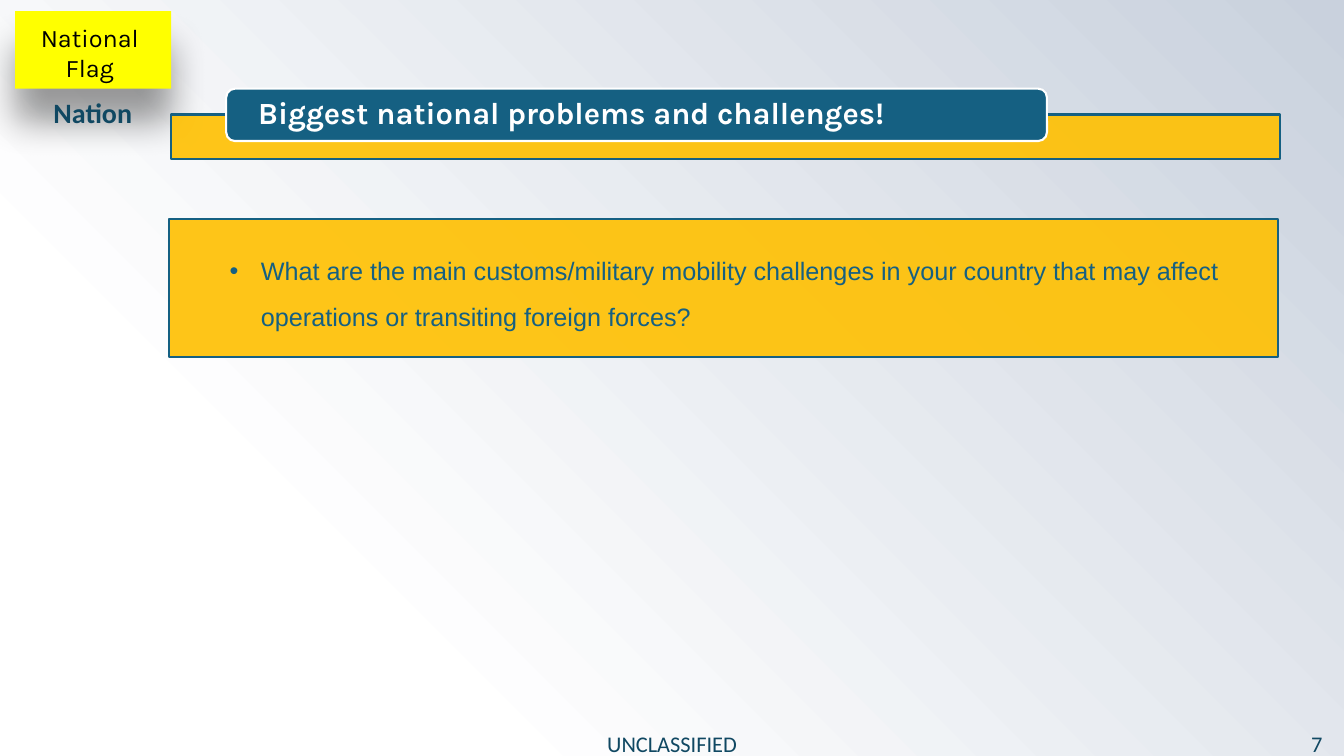
import pptx
import pptx.util
import pptx.dml.color
import pptx.enum.shapes
import pptx.enum.text
import pptx.oxml
import pptx.oxml.ns

COLORS = {"sky": "C9D1DD", "white": "FFFFFF", "navy": "104862", "blue": "156082",
          "amber": "FFC000", "yellow": "FFFF00", "black": "000000"}
NAMESPACE = pptx.oxml.ns.nsdecls("a")
SHAPES = pptx.enum.shapes.MSO_SHAPE
ALIGN = pptx.enum.text.PP_ALIGN
ANCHOR = pptx.enum.text.MSO_ANCHOR

presentation = pptx.Presentation()
presentation.slide_width = pptx.util.Inches(13.33)
presentation.slide_height = pptx.util.Inches(7.5)
slide = presentation.slides.add_slide(presentation.slide_layouts[6])


def place(left, top, width, height):
    across, down = presentation.slide_width / 100, presentation.slide_height / 100
    return [int(length) for length in (left * across, top * down, width * across, height * down)]


def add_text(area, text, font, size, color, bold=False, align=ALIGN.CENTER, anchor=ANCHOR.MIDDLE):
    shape = slide.shapes.add_textbox(*place(*area))
    shape.text_frame.word_wrap = True
    shape.text_frame.vertical_anchor = anchor
    paragraph = shape.text_frame.paragraphs[0]
    paragraph.text = text
    paragraph.alignment = align
    paragraph.font.name = font
    paragraph.font.size = pptx.util.Pt(size)
    paragraph.font.bold = bold
    paragraph.font.color.rgb = pptx.dml.color.RGBColor.from_string(COLORS[color])
    return shape


background = slide.background.fill
background.gradient()
for stop, color, position in zip(background.gradient_stops, ("sky", "white"), (0, 0.76)):
    stop.color.rgb = pptx.dml.color.RGBColor.from_string(COLORS[color])
    stop.position = position
linear = slide.background.element.find(".//" + pptx.oxml.ns.qn("a:lin"))
linear.getparent().replace(linear, pptx.oxml.parse_xml(
    f'<a:path {NAMESPACE} path="circle"><a:fillToRect l="100000" b="100000"/></a:path>'))

panels = {}
for name, kind, area, fill, line, alpha in (
    ("flag", SHAPES.RECTANGLE, (1.13, 1.47, 11.6, 10.27), "yellow", None, 100),
    ("strip", SHAPES.RECTANGLE, (12.71, 15.15, 82.52, 5.87), "amber", "blue", 90),
    ("title", SHAPES.ROUNDED_RECTANGLE, (16.83, 11.73, 61.07, 6.93), "blue", "white", 100),
    ("question", SHAPES.RECTANGLE, (12.6, 28.93, 82.52, 18.27), "amber", "blue", 90),
):
    shape = slide.shapes.add_shape(kind, *place(*area))
    shape.shadow.inherit = False
    shape.fill.solid()
    shape.fill.fore_color.rgb = pptx.dml.color.RGBColor.from_string(COLORS[fill])
    if alpha < 100:
        color_element = shape.element.spPr.find(".//" + pptx.oxml.ns.qn("a:srgbClr"))
        color_element.append(pptx.oxml.parse_xml(f'<a:alpha {NAMESPACE} val="{alpha * 1000}"/>'))
    if line:
        shape.line.color.rgb = pptx.dml.color.RGBColor.from_string(COLORS[line])
        shape.line.width = pptx.util.Pt(1.5)
    else:
        shape.line.fill.background()
    panels[name] = shape

effects = panels["flag"].element.spPr.find(pptx.oxml.ns.qn("a:effectLst"))
effects.append(pptx.oxml.parse_xml(
    f'<a:outerShdw {NAMESPACE} blurRad="{pptx.util.Pt(26)}" dist="{pptx.util.Pt(24)}" '
    f'dir="5400000" algn="ctr" rotWithShape="0"><a:srgbClr val="{COLORS["black"]}">'
    '<a:alpha val="39000"/></a:srgbClr></a:outerShdw>'))

for left, width, text in ((43.59, 12.83, "UNCLASSIFIED"), (95.95, 4.04, "7")):
    footer = add_text((left, 96.67, width, 3.32), text, "Calibri", 16, "navy")
    footer.text_frame.margin_top = footer.text_frame.margin_bottom = 0

add_text((1.58, 2.27, 10.2, 9.47), "National Flag", "Karla", 18, "black", anchor=ANCHOR.TOP)
nation = add_text((0.68, 10.8, 12.45, 8.8), "Nation", "Calibri", 20, "navy", bold=True)
nation.text_frame.paragraphs[0].line_spacing = 0.9

title = add_text((17.03, 12, 60.69, 6.27), "Biggest national problems and challenges!",
                 "Karla", 22, "white", bold=True, align=ALIGN.LEFT)
title.text_frame.margin_left = title.text_frame.margin_right = pptx.util.Inches(0.29)
title.text_frame.margin_top = title.text_frame.margin_bottom = 0
title.text_frame.paragraphs[0].line_spacing = 0.9

question = add_text((12.6, 31.5, 81.02, 12.67),
                    "What are the main customs/military mobility challenges in your country "
                    "that may affect operations or transiting foreign forces?",
                    "Arial", 18, "blue", align=ALIGN.LEFT)
paragraph = question.text_frame.paragraphs[0]
paragraph.level = 1
paragraph.line_spacing = 1.5
properties = paragraph._p.get_or_add_pPr()
properties.set("marL", str(pptx.util.Inches(0.81)))
properties.set("indent", str(pptx.util.Inches(-0.31)))
font_defaults = properties.find(pptx.oxml.ns.qn("a:defRPr"))
for bullet in ('buFont {} typeface="Arial"', 'buChar {} char="•"'):
    font_defaults.addprevious(pptx.oxml.parse_xml(f"<a:{bullet.format(NAMESPACE)}/>"))

presentation.save("out.pptx")
